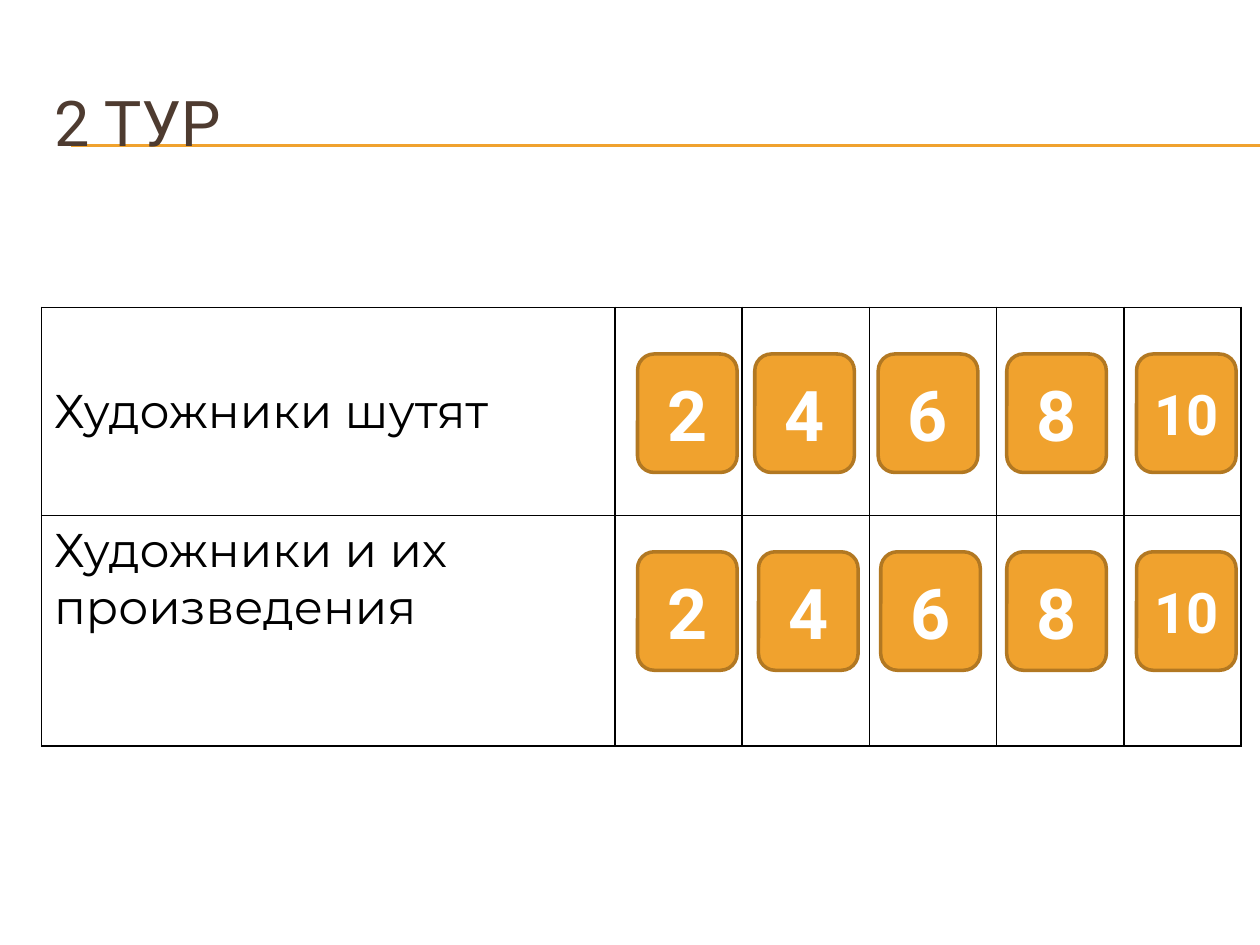
from lxml.etree import SubElement
from pptx import Presentation
from pptx.dml.color import RGBColor
from pptx.enum.shapes import MSO_CONNECTOR as Connector, MSO_SHAPE as Shape
from pptx.enum.text import MSO_ANCHOR as Anchor, MSO_AUTO_SIZE as AutoSize, PP_ALIGN as Align
from pptx.oxml.ns import qn
from pptx.util import Inches, Pt

COLORS = {
    "accent": "F0A22E",
    "accent_dark": "B27822",
    "heading": "4E3B30",
    "ink": "000000",
    "paper": "FFFFFF",
}
HEADING = {"name": "Roboto", "size": Pt(36), "bold": False}
TOPIC = {"name": "Montserrat", "size": Pt(27), "bold": False}
SCORE = {"name": "Roboto", "size": Pt(40), "bold": True}
LONG_SCORE = {**SCORE, "size": Pt(32)}

COLUMN_WIDTHS = [4.55, 1.01, 1.01, 1.01, 1.01, 0.93]
ROW_HEIGHTS = [1.65, 1.83]
TOPICS = [
    ("Художники шутят", Anchor.MIDDLE),
    ("Художники и их произведения", Anchor.TOP),
]
SCORES = ["2", "4", "6", "8", "10"]
SCORE_ROWS = [
    (2.81, [5.06, 5.99, 6.97, 7.99, 9.02]),
    (4.38, [5.06, 6.02, 6.99, 7.99, 9.02]),
]


def color(key):
    return RGBColor.from_string(COLORS[key])


def set_all(target, values):
    for name, value in values.items():
        setattr(target, name, value)


def write(frame, text, font, font_color, align, anchor):
    set_all(frame, {"word_wrap": True, "vertical_anchor": anchor})
    paragraph = frame.paragraphs[0]
    paragraph.alignment = align
    run = paragraph.add_run()
    run.text = text
    set_all(run.font, font)
    run.font.color.rgb = color(font_color)


def add_rule(slide, top):
    rule = slide.shapes.add_connector(
        Connector.STRAIGHT, Inches(0.56), Inches(top), Inches(10), Inches(top))
    rule.line.color.rgb = color("accent")
    rule.line.width = Pt(0.75)
    SubElement(rule._element.spPr, qn("a:effectLst"))


def add_heading(slide, text):
    heading = slide.shapes.title
    set_all(heading, {"left": Inches(0.33), "top": Inches(0.5),
                      "width": Inches(9.5), "height": Inches(0.92)})
    heading.text_frame.auto_size = AutoSize.NONE
    write(heading.text_frame, text, HEADING, "heading", Align.LEFT, Anchor.MIDDLE)
    slide.shapes._spTree.append(heading._element)


def format_cell(cell):
    properties = cell._tc.get_or_add_tcPr()
    for side in ("a:lnL", "a:lnR", "a:lnT", "a:lnB"):
        border = SubElement(properties, qn(side), w=str(Pt(1)))
        fill = SubElement(border, qn("a:solidFill"))
        SubElement(fill, qn("a:srgbClr"), val=COLORS["ink"])
    cell.fill.background()


def add_topic_table(slide):
    table = slide.shapes.add_table(
        len(ROW_HEIGHTS), len(COLUMN_WIDTHS), Inches(0.33), Inches(2.44),
        Inches(sum(COLUMN_WIDTHS)), Inches(sum(ROW_HEIGHTS))).table
    set_all(table, {"first_row": False, "horz_banding": False})
    for column, width in zip(table.columns, COLUMN_WIDTHS):
        column.width = Inches(width)
    for row, height in zip(table.rows, ROW_HEIGHTS):
        row.height = Inches(height)
    for cell in table.iter_cells():
        format_cell(cell)
    for index, (topic, anchor) in enumerate(TOPICS):
        cell = table.cell(index, 0)
        cell.vertical_anchor = anchor
        paragraph = cell.text_frame.paragraphs[0]
        paragraph.space_before = Pt(6.7)
        run = paragraph.add_run()
        run.text = topic
        set_all(run.font, TOPIC)
        run.font.color.rgb = color("ink")


def add_score(slide, left, top, score):
    button = slide.shapes.add_shape(
        Shape.ROUNDED_RECTANGLE, Inches(left), Inches(top), Inches(0.79), Inches(0.94))
    button.shadow.inherit = False
    button.fill.solid()
    button.fill.fore_color.rgb = color("accent")
    button.line.color.rgb = color("accent_dark")
    button.line.width = Pt(2)
    font = SCORE if len(score) == 1 else LONG_SCORE
    write(button.text_frame, score, font, "paper", Align.CENTER, Anchor.MIDDLE)


def main():
    deck = Presentation()
    set_all(deck, {"slide_width": Inches(10), "slide_height": Inches(7.5)})
    slide = deck.slides.add_slide(deck.slide_layouts[5])
    slide.background.fill.solid()
    slide.background.fill.fore_color.rgb = color("paper")
    for top in (1.15, 1.16):
        add_rule(slide, top)
    add_heading(slide, "2 ТУР")
    add_topic_table(slide)
    for top, lefts in SCORE_ROWS:
        for left, score in zip(lefts, SCORES):
            add_score(slide, left, top, score)
    deck.save("out.pptx")


if __name__ == "__main__":
    main()
